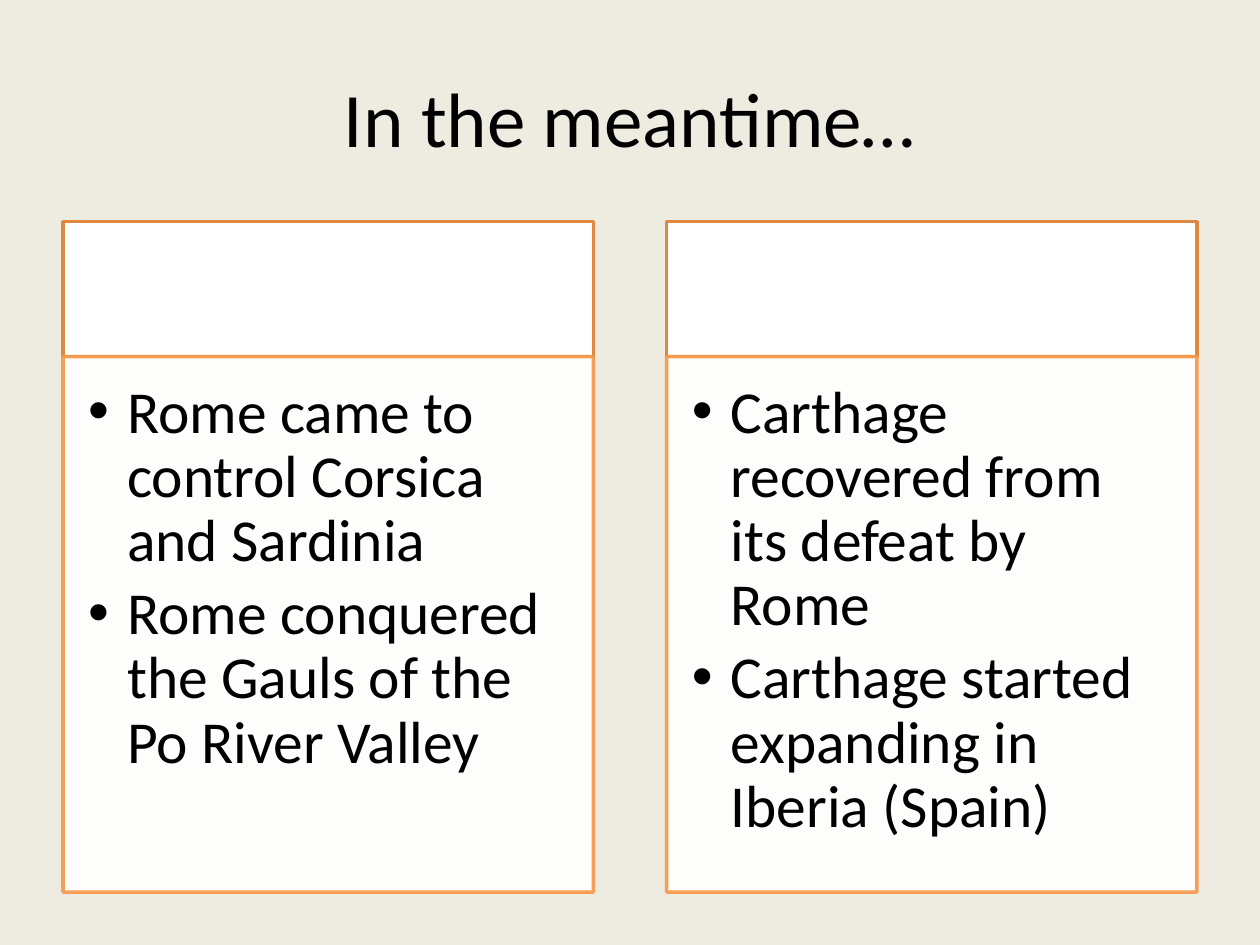
from lxml import etree
from pptx import Presentation
from pptx.dml.color import RGBColor
from pptx.enum.shapes import MSO_SHAPE as Shape
from pptx.enum.text import MSO_ANCHOR as Anchor, MSO_AUTO_SIZE as AutoSize, PP_ALIGN as Align
from pptx.oxml.ns import qn
from pptx.util import Inches, Pt

COLORS = {
    "background": "EEECE1",
    "panel": "FFFFFF",
    "header_line": "E08840",
    "body_line": "F79646",
    "text": "000000",
}
COLUMNS = [
    ["Rome came to control Corsica and Sardinia",
     "Rome conquered the Gauls of the Po River Valley"],
    ["Carthage recovered from its defeat by Rome",
     "Carthage started expanding in Iberia (Spain)"],
]
MARGIN, COLUMN_WIDTH, COLUMN_GAP = 0.5, 4.21, 0.58
HEADER_TOP, HEADER_HEIGHT, BODY_HEIGHT = 1.76, 1.07, 4.25


def rgb(name):
    return RGBColor.from_string(COLORS[name])


def place(shape, left, top, width, height):
    shape.left, shape.top = Inches(left), Inches(top)
    shape.width, shape.height = Inches(width), Inches(height)


def write(paragraph, text, size, align=Align.LEFT, font="Calibri", color="text"):
    paragraph.alignment = align
    run = paragraph.add_run()
    run.text = text
    run.font.name, run.font.size = font, Pt(size)
    run.font.color.rgb = rgb(color)


def set_opacity(fill_element, percent):
    color = fill_element.find(".//" + qn("a:srgbClr"))
    etree.SubElement(color, qn("a:alpha"), val=str(percent * 1000))


def paint(shape, line_color, opacity=100):
    shape.fill.solid()
    shape.fill.fore_color.rgb = rgb("panel")
    shape.line.color.rgb = rgb(line_color)
    shape.line.width = Pt(2)
    if opacity < 100:
        properties = shape.element.spPr
        set_opacity(properties.find(qn("a:solidFill")), opacity)
        set_opacity(properties.find(qn("a:ln")), opacity)


def add_title(slide, text):
    title = slide.shapes.title
    place(title, MARGIN, 0.3, 9, 1.25)
    title.text_frame.vertical_anchor = Anchor.MIDDLE
    write(title.text_frame.paragraphs[0], text, 44, align=Align.CENTER)


def add_header(slide, left):
    header = slide.shapes.add_shape(
        Shape.RECTANGLE, Inches(left), Inches(HEADER_TOP),
        Inches(COLUMN_WIDTH), Inches(HEADER_HEIGHT))
    header.shadow.inherit = False
    paint(header, "header_line")
    # Keep the header behind the list panels
    slide.shapes.title.element.addnext(header.element)


def fill_list(panel, left, items):
    place(panel, left, HEADER_TOP + HEADER_HEIGHT, COLUMN_WIDTH, BODY_HEIGHT)
    paint(panel, "body_line", opacity=90)
    frame = panel.text_frame
    frame.auto_size = AutoSize.NONE
    frame.word_wrap = True
    frame.vertical_anchor = Anchor.TOP
    frame.margin_left = frame.margin_top = Inches(0.2)
    frame.margin_right, frame.margin_bottom = Inches(0.26), Inches(0.3)
    for index, item in enumerate(items):
        paragraph = frame.add_paragraph() if index else frame.paragraphs[0]
        write(paragraph, item, 34)
        paragraph.line_spacing = 0.9
        paragraph.space_before, paragraph.space_after = Pt(0), Pt(5)
        # Hanging bullet
        properties = paragraph._p.get_or_add_pPr()
        properties.set("marL", str(Inches(0.31)))
        properties.set("indent", str(-Inches(0.31)))
        etree.SubElement(properties, qn("a:buChar"), char="•")


def main():
    deck = Presentation()
    deck.slide_width, deck.slide_height = Inches(10), Inches(7.5)
    slide = deck.slides.add_slide(deck.slide_layouts.get_by_name("Two Content"))
    slide.background.fill.solid()
    slide.background.fill.fore_color.rgb = rgb("background")

    add_title(slide, "In the meantime…")

    # One header and one list for each side
    for index, items in enumerate(COLUMNS):
        left = MARGIN + index * (COLUMN_WIDTH + COLUMN_GAP)
        add_header(slide, left)
        fill_list(slide.placeholders[index + 1], left, items)

    deck.save("out.pptx")


if __name__ == "__main__":
    main()
